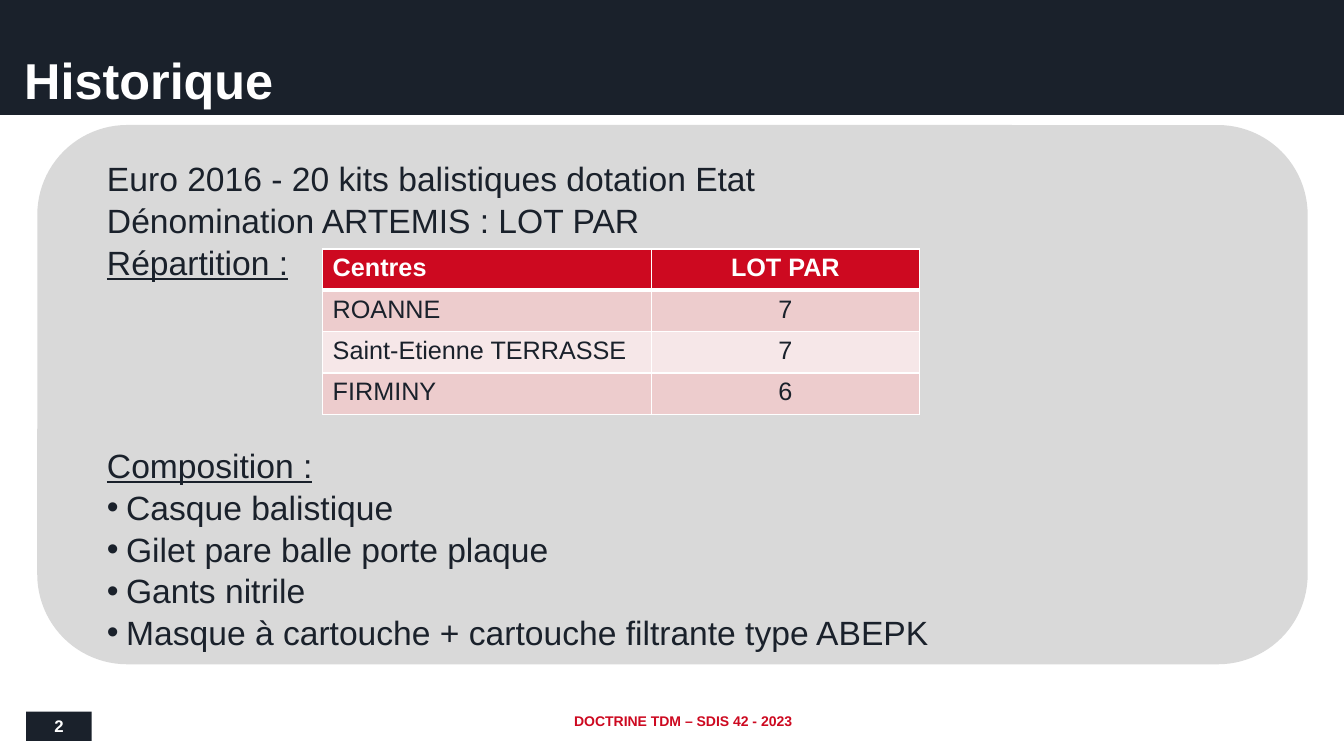
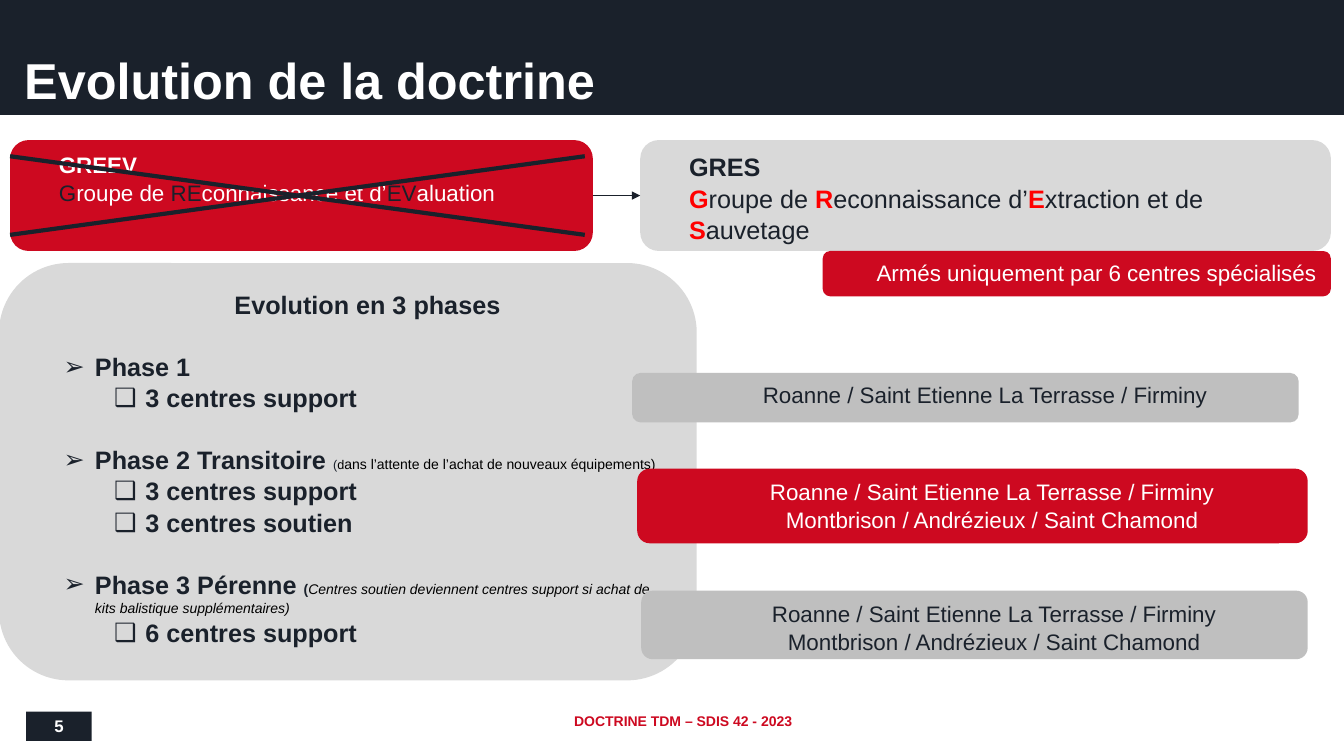
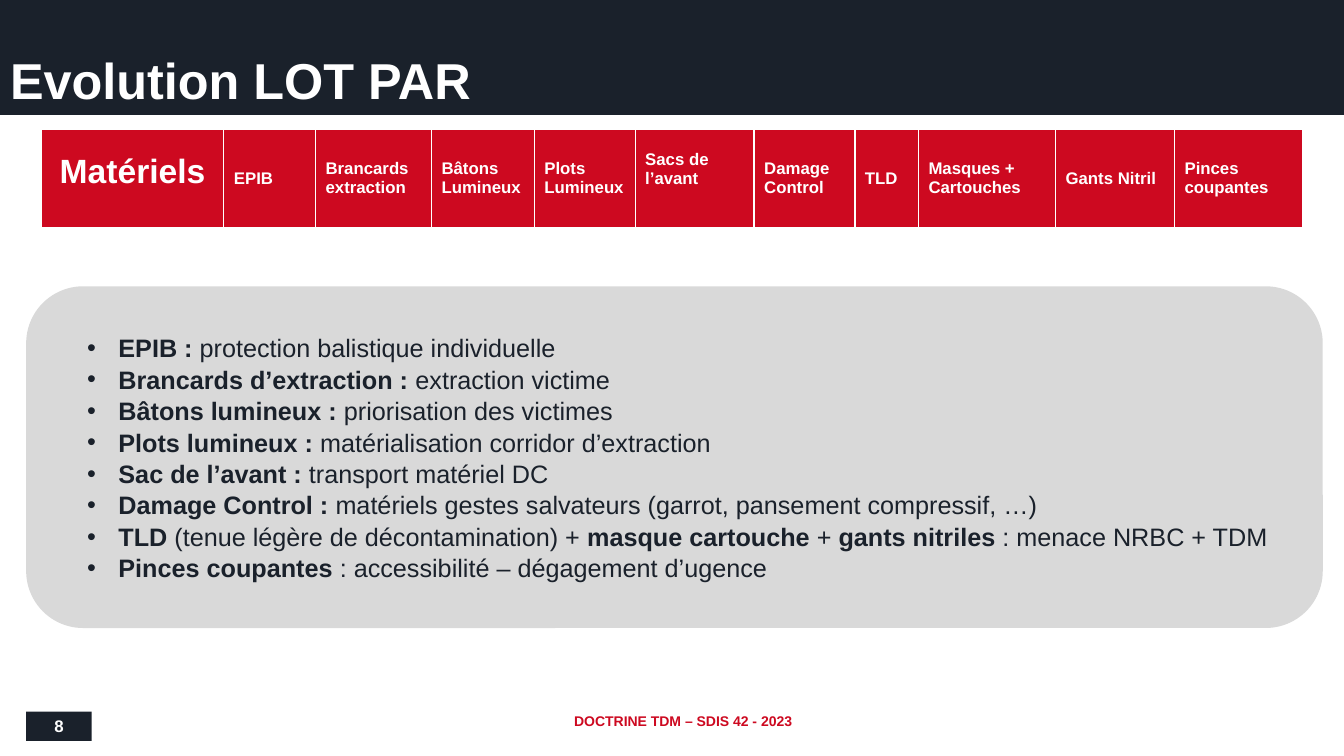
from lxml.etree import SubElement
from pptx import Presentation
from pptx.dml.color import RGBColor
from pptx.enum.shapes import MSO_CONNECTOR, MSO_SHAPE
from pptx.enum.text import MSO_ANCHOR, MSO_AUTO_SIZE, PP_ALIGN
from pptx.oxml.ns import qn
from pptx.util import Inches, Pt

COLORS = {
    "navy": "1A212B", "red": "CD0920", "bright": "FF0000", "white": "FFFFFF",
    "panel": "D9D9D9", "grey": "BFBFBF", "black": "000000",
    "row_dark": "EDCCCD", "row_light": "F6E7E8",
}
FONT = "Arial"
FOOTER = "DOCTRINE TDM – SDIS 42 - 2023"
LINE_SPACING = 1.04

# Paragraph kinds: left margin, first-line indent, bullet
PLAIN = (0.39, 0, None)
DOT_TIGHT = (0.58, -0.19, "•")
DOT = (0.71, -0.31, "•")
ARROW = (0.71, -0.31, "➢")
BOX = (1.21, -0.31, "❑")

BOLD = {"bold": True}
RED_INITIAL = {"bold": True, "color": "bright"}
NAVY_LETTER = {"color": "navy"}
UNDERLINE = {"underline": True}
ASIDE = {"size": 10, "color": "black"}

# Each paragraph: kind, space before in points, runs of (text, style)
KITS = [
    (PLAIN, 0, [("Euro 2016 - 20 kits balistiques dotation Etat", {})]),
    (PLAIN, 0, [("Dénomination ARTEMIS : LOT PAR", {})]),
    (PLAIN, 0, [("Répartition :", UNDERLINE)]),
    (PLAIN, 115, [("Composition :", UNDERLINE)]),
] + [
    (DOT_TIGHT, 0, [(item, {})]) for item in (
        "Casque balistique", "Gilet pare balle porte plaque", "Gants nitrile",
        "Masque à cartouche + cartouche filtrante type ABEPK")
]
CENTRES = [("Centres", "LOT PAR"), ("ROANNE", "7"),
           ("Saint-Etienne TERRASSE", "7"), ("FIRMINY", "6")]

GREEV = [
    (PLAIN, 0, [("GREEV", BOLD)]),
    (PLAIN, 0, [("G", NAVY_LETTER), ("roupe de ", {}), ("RE", NAVY_LETTER),
                ("connaissance et d’", {}), ("EV", NAVY_LETTER), ("aluation", {})]),
]
GRES = [
    (PLAIN, 0, [("GRES", BOLD)]),
    (PLAIN, 0, [("G", RED_INITIAL), ("roupe de ", {}), ("R", RED_INITIAL),
                ("econnaissance d’", {}), ("E", RED_INITIAL),
                ("xtraction et de ", {}), ("S", RED_INITIAL), ("auvetage", {})]),
]
PHASES_HEADING = "Evolution en 3 phases"
PHASES = [
    ([("Phase 1", BOLD)], ["3 centres support"]),
    ([("Phase 2 Transitoire ", BOLD), ("(", {"size": 9}), ("d", {**ASIDE, "size": 9}),
      ("ans l’attente de l’achat de nouveaux équipements)", ASIDE)],
     ["3 centres support", "3 centres soutien"]),
    ([("Phase 3 Pérenne ", BOLD), ("(", {"size": 10, "bold": True}),
      ("Centres soutien deviennent centres support si achat de kits balistique "
       "supplémentaires)", {**ASIDE, "italic": True})],
     ["6 centres support"]),
]
SUPPORT = "Roanne / Saint Etienne La Terrasse / Firminy"
SOUTIEN = "Montbrison / Andrézieux / Saint Chamond"
# Position, fill, text colour, lines
LABELS = [
    ((6.27, 3.7, 6.61, 0.49), "grey", "navy", [SUPPORT]),
    ((6.32, 4.65, 6.65, 0.74), "red", "white", [SUPPORT, SOUTIEN]),
    ((6.36, 5.86, 6.61, 0.68), "grey", "navy", [SUPPORT, SOUTIEN]),
]
SPECIALISED = "Armés uniquement par 6 centres spécialisés"

MATERIALS_HEADING = "Matériels"
MATERIALS = [
    ("EPIB", 0.91), ("Brancards extraction", 1.15), ("Bâtons Lumineux", 1.02),
    ("Plots Lumineux", 1), ("Sacs de l’avant", 1.18), ("Damage Control", 1),
    ("TLD", 0.63), ("Masques + Cartouches", 1.36), ("Gants Nitril", 1.18),
    ("Pinces coupantes", 1.27),
]
USES = [
    [("EPIB : ", BOLD), ("protection balistique individuelle", {})],
    [("Brancards d’extraction : ", BOLD), ("extraction victime", {})],
    [("Bâtons lumineux : ", BOLD), ("priorisation des victimes", {})],
    [("Plots lumineux : ", BOLD), ("matérialisation corridor d’extraction", {})],
    [("Sac de l’avant : ", BOLD), ("transport matériel DC", {})],
    [("Damage Control : ", BOLD),
     ("matériels gestes salvateurs (garrot, pansement compressif, …)", {})],
    [("TLD", BOLD), (" (tenue légère de décontamination) + ", {}),
     ("masque cartouche ", BOLD), ("+ ", {}), ("gants nitriles ", BOLD),
     (": menace NRBC + TDM", {})],
    [("Pinces coupantes ", BOLD), (": accessibilité – dégagement d’ugence", {})],
]


def rgb(color):
    return RGBColor.from_string(COLORS[color])


def inches(box):
    return [Inches(length) for length in box]


def style_font(font, size=None, color=None, bold=None, italic=None, underline=None):
    if size:
        font.size = Pt(size)
    if color:
        font.color.rgb = rgb(color)
    font.bold, font.italic, font.underline = bold, italic, underline


def style_paragraph(paragraph, size, color, bold=False, align=PP_ALIGN.LEFT):
    paragraph.alignment = align
    paragraph.font.name = FONT
    style_font(paragraph.font, size, color, bold)


def set_margins(target, left, top, right, bottom):
    target.margin_left, target.margin_top = Inches(left), Inches(top)
    target.margin_right, target.margin_bottom = Inches(right), Inches(bottom)


def set_bullet(paragraph, kind):
    left, indent, bullet = kind
    props = paragraph._p.get_or_add_pPr()
    props.set("marL", str(Inches(left)))
    props.set("indent", str(Inches(indent)))
    if bullet:
        SubElement(props, qn("a:buFont")).set("typeface", FONT)
        SubElement(props, qn("a:buChar")).set("char", bullet)
    else:
        SubElement(props, qn("a:buNone"))


def add_block(slide, box, fill, preset):
    block = slide.shapes.add_shape(preset, *inches(box))
    block.shadow.inherit = False
    block.fill.solid()
    block.fill.fore_color.rgb = rgb(fill)
    block.line.fill.background()
    return block


def add_panel(slide, box, fill, paragraphs, size, color="navy",
              align=PP_ALIGN.LEFT, anchor=MSO_ANCHOR.TOP):
    """Rounded panel; returns its paragraphs."""
    frame = add_block(slide, box, fill, MSO_SHAPE.ROUNDED_RECTANGLE).text_frame
    frame.word_wrap = True
    frame.vertical_anchor = anchor
    set_margins(frame, 0.04, 0.05, 0.04, 0.05)
    for index, (kind, before, runs) in enumerate(paragraphs):
        paragraph = frame.add_paragraph() if index else frame.paragraphs[0]
        set_bullet(paragraph, kind)
        style_paragraph(paragraph, size, color, align=align)
        paragraph.line_spacing = LINE_SPACING
        if before:
            paragraph.space_before = Pt(before)
        for text, style in runs:
            run = paragraph.add_run()
            run.text = text
            style_font(run.font, **style)
    return frame.paragraphs


def add_line(slide, start, end, width, arrow=False):
    line = slide.shapes.add_connector(MSO_CONNECTOR.STRAIGHT, *inches(start + end))
    line.line.color.rgb = rgb("navy")
    line.line.width = Pt(width)
    props = line.element.spPr
    if arrow:
        SubElement(props.find(qn("a:ln")), qn("a:tailEnd")).set("type", "triangle")
    SubElement(props, qn("a:effectLst"))


def add_grid(slide, left, top, widths, row_height, row_count):
    table = slide.shapes.add_table(
        row_count, len(widths),
        *inches((left, top, sum(widths), row_height * row_count))).table
    for column, width in zip(table.columns, widths):
        column.width = Inches(width)
    for row in table.rows:
        row.height = Inches(row_height)
    return table


def fill_cell(cell, text, fill, size, color, bold, align=PP_ALIGN.LEFT,
              top_width=1, bottom_width=1):
    props = cell._tc.get_or_add_tcPr()
    for side, width in (("L", 1), ("R", 1), ("T", top_width), ("B", bottom_width)):
        border = SubElement(props, qn(f"a:ln{side}"))
        border.set("w", str(Pt(width)))
        paint = SubElement(border, qn("a:solidFill"))
        SubElement(paint, qn("a:srgbClr")).set("val", COLORS["white"])
    cell.fill.solid()
    cell.fill.fore_color.rgb = rgb(fill)
    cell.text = text
    style_paragraph(cell.text_frame.paragraphs[0], size, color, bold, align)


def add_slide(deck, title_text, number, title_left=0.24):
    slide = deck.slides.add_slide(deck.slide_layouts[5])
    footer = slide.shapes.add_textbox(*inches((3.94, 7.06, 5.67, 0.24))).text_frame
    footer.word_wrap = True
    set_margins(footer, 0.09, 0.04, 0.09, 0.04)
    footer.text = FOOTER
    style_paragraph(footer.paragraphs[0], 10, "red", True, PP_ALIGN.CENTER)
    footer.paragraphs[0].line_spacing = 0.8

    title = slide.shapes.title
    title.left, title.top, title.width, title.height = inches((0, 0, 13.33, 1.14))
    title.fill.solid()
    title.fill.fore_color.rgb = rgb("navy")
    title.text = title_text
    title.text_frame.auto_size = MSO_AUTO_SIZE.NONE
    title.text_frame.vertical_anchor = MSO_ANCHOR.BOTTOM
    set_margins(title.text_frame, title_left, 0.05, 0.1, 0.05)
    style_paragraph(title.text_frame.paragraphs[0], 36, "white", True)

    badge = add_block(slide, (0.26, 7.06, 0.65, 0.29), "navy", MSO_SHAPE.RECTANGLE)
    badge.text_frame.text = str(number)
    style_paragraph(badge.text_frame.paragraphs[0], 12, "white", True, PP_ALIGN.CENTER)
    return slide


def build_history(deck):
    slide = add_slide(deck, "Historique", 2)
    add_panel(slide, (0.37, 1.24, 12.6, 5.35), "panel", KITS, 24)
    table = add_grid(slide, 3.2, 2.47, (3.26, 2.66), 0.41, len(CENTRES))
    for row, values in enumerate(CENTRES):
        header = row == 0
        fill = "red" if header else ("row_dark" if row % 2 else "row_light")
        for column, value in enumerate(values):
            fill_cell(table.cell(row, column), value, fill, 18,
                      "white" if header else "navy", header,
                      PP_ALIGN.CENTER if column else PP_ALIGN.LEFT,
                      top_width=3 if row == 1 else 1,
                      bottom_width=3 if header else 1)


def build_doctrine(deck):
    slide = add_slide(deck, "Evolution de la doctrine", 5)
    add_panel(slide, (0.1, 1.39, 5.78, 1.1), "red", GREEV, 16, "white")
    add_panel(slide, (6.35, 1.39, 6.85, 1.1), "panel", GRES, 18)
    add_line(slide, (5.88, 1.94), (6.35, 1.94), 0.75, arrow=True)
    add_panel(slide, (8.16, 2.49, 5.04, 0.45), "red",
              [(PLAIN, 0, [(SPECIALISED, {})])], 16, "white", PP_ALIGN.CENTER)
    add_line(slide, (0.1, 1.55), (5.8, 2.33), 3)
    add_line(slide, (5.8, 1.55), (0.1, 2.33), 3)

    paragraphs = [(PLAIN, 0, [(PHASES_HEADING, BOLD)])]
    for heading, items in PHASES:
        paragraphs.append((ARROW, 21.6, heading))
        paragraphs += [(BOX, 0, [(item, BOLD)]) for item in items]
    panel_paragraphs = add_panel(slide, (-0.01, 2.61, 6.92, 4.14), "panel", paragraphs, 18)
    panel_paragraphs[0].alignment = PP_ALIGN.CENTER

    for box, fill, color, lines in LABELS:
        add_panel(slide, box, fill, [(PLAIN, 0, [(line, {})]) for line in lines],
                  16, color, PP_ALIGN.CENTER)


def build_materials(deck):
    slide = add_slide(deck, "Evolution LOT PAR", 8, title_left=0.1)
    columns = [(MATERIALS_HEADING, 1.81)] + MATERIALS
    table = add_grid(slide, 0.41, 1.28, [width for _, width in columns], 0.98, 1)
    for index, (text, _) in enumerate(columns):
        cell = table.cell(0, index)
        if index == 0:
            fill_cell(cell, text, "red", 24, "white", True, PP_ALIGN.CENTER)
            cell.margin_top = Inches(0.24)
            continue
        fill_cell(cell, text, "red", 12, "white", True)
        cell.vertical_anchor = MSO_ANCHOR.MIDDLE
        if text.startswith("Sacs"):
            cell.margin_bottom = Inches(0.24)
    add_panel(slide, (0.26, 2.84, 12.86, 3.39), "panel",
              [(DOT, 0, runs) for runs in USES], 18, anchor=MSO_ANCHOR.MIDDLE)


def main():
    deck = Presentation()
    deck.slide_width, deck.slide_height = Inches(13.33), Inches(7.5)
    build_history(deck)
    build_doctrine(deck)
    build_materials(deck)
    deck.save("out.pptx")


if __name__ == "__main__":
    main()
